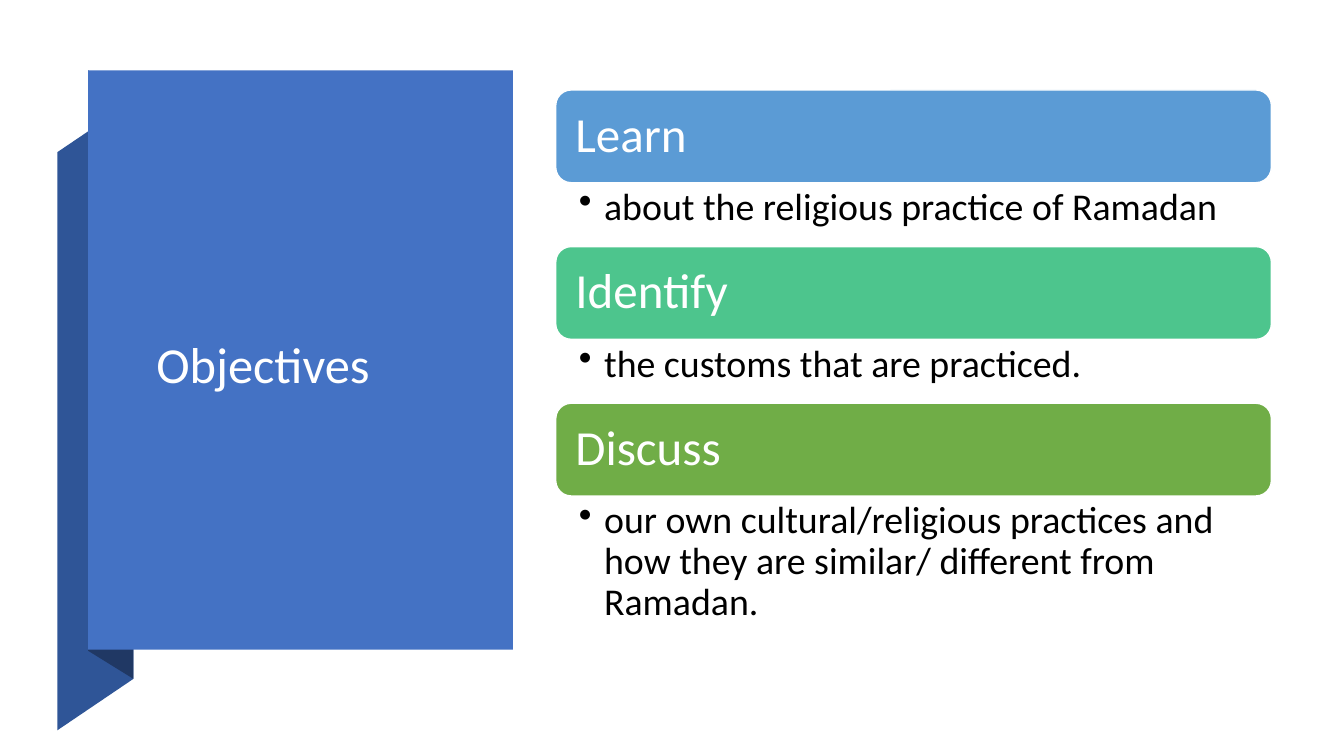
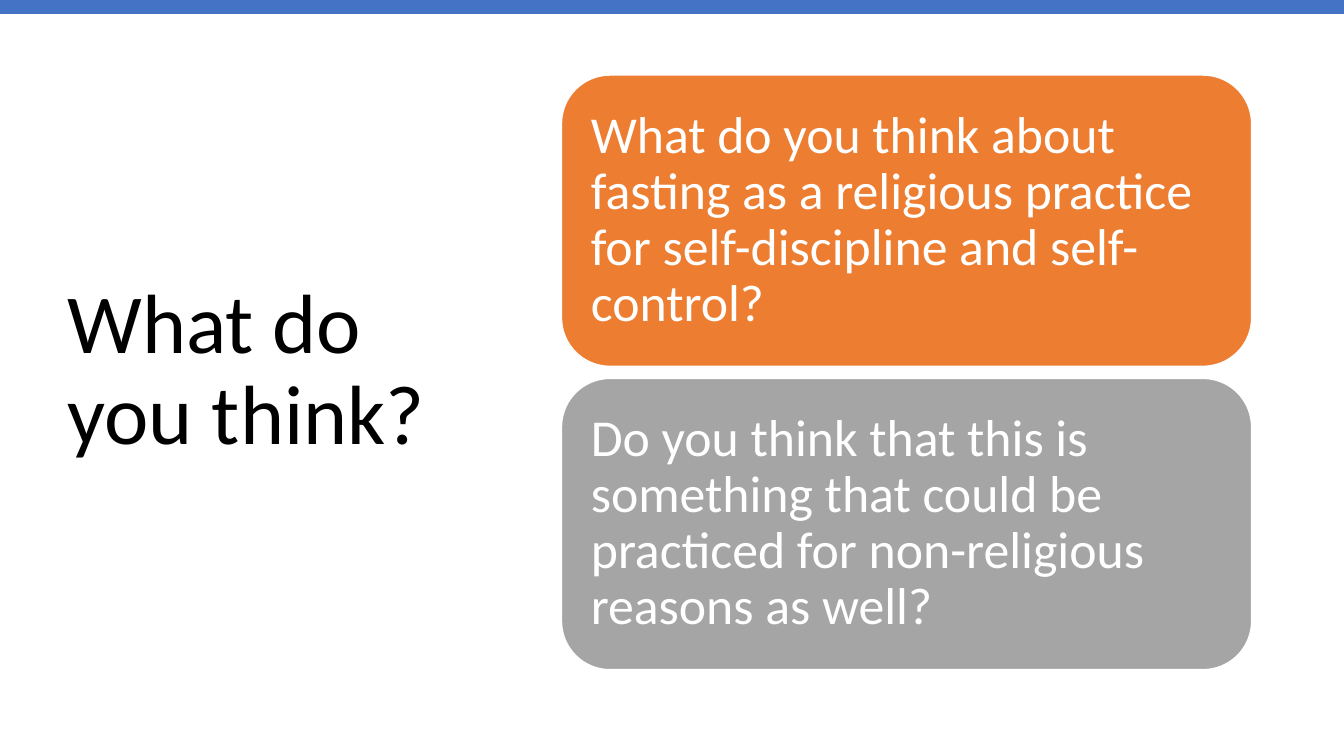
from lxml import etree
from pptx import Presentation
from pptx.dml.color import RGBColor
from pptx.enum.shapes import MSO_SHAPE
from pptx.enum.text import MSO_ANCHOR, MSO_AUTO_SIZE, PP_ALIGN
from pptx.oxml.ns import qn
from pptx.util import Inches, Pt

RECT, ROUND = MSO_SHAPE.RECTANGLE, MSO_SHAPE.ROUNDED_RECTANGLE
TOP, MIDDLE = MSO_ANCHOR.TOP, MSO_ANCHOR.MIDDLE
LEFT, NO_FIT = PP_ALIGN.LEFT, MSO_AUTO_SIZE.NONE
TITLE_ONLY = 5

FONT = "Calibri"
WHITE = RGBColor(0xFF, 0xFF, 0xFF)
BLACK = RGBColor(0x00, 0x00, 0x00)
BLUE = RGBColor(0x44, 0x72, 0xC4)
MID_BLUE = RGBColor(0x2F, 0x55, 0x97)
DARK_BLUE = RGBColor(0x20, 0x38, 0x64)
SKY = RGBColor(0x5B, 0x9B, 0xD5)
MINT = RGBColor(0x4D, 0xC5, 0x8D)
GREEN = RGBColor(0x70, 0xAD, 0x47)
ORANGE = RGBColor(0xED, 0x7D, 0x31)
GRAY = RGBColor(0xA5, 0xA5, 0xA5)

CARD_INSETS = (0.15, 0.15, 0.15, 0.15)
BULLET_INSETS = (0.23, 0.05, 0.27, 0.05)
TITLE_INSETS = (0.1, 0.05, 0.1, 0.05)


class Deck:
    """Hold the shared style and the current slide; places are percentages of the slide."""

    def __init__(self):
        self.prs = Presentation()
        self.prs.slide_width, self.prs.slide_height = Inches(13.33), Inches(7.5)
        self.s = None

    def x(self, share):
        return round(self.prs.slide_width * share / 100)

    def y(self, share):
        return round(self.prs.slide_height * share / 100)

    def box(self, left, top, width, height):
        return self.x(left), self.y(top), self.x(width), self.y(height)

    def add_slide(self):
        self.s = self.prs.slides.add_slide(self.prs.slide_layouts[TITLE_ONLY])

    def set_text(self, sp, text, size, color, anchor, insets):
        tf = sp.text_frame
        tf.text = text
        tf.word_wrap, tf.auto_size, tf.vertical_anchor = True, NO_FIT, anchor
        tf.margin_left, tf.margin_top, tf.margin_right, tf.margin_bottom = map(Inches, insets)
        p = tf.paragraphs[0]
        p.alignment, p.line_spacing = LEFT, 0.9
        font = p.runs[0].font
        font.name, font.size, font.color.rgb = FONT, Pt(size), color
        return p

    def title(self, text, place, size, color):
        sp = self.s.shapes.title
        sp.left, sp.top, sp.width, sp.height = self.box(*place)
        self.set_text(sp, text, size, color, MIDDLE, TITLE_INSETS)
        sp.element.getparent().append(sp.element)

    def paint(self, sp, fill):
        sp.shadow.inherit = False
        sp.fill.solid()
        sp.fill.fore_color.rgb = fill
        sp.line.fill.background()

    def band(self, place, fill):
        self.paint(self.s.shapes.add_shape(RECT, *self.box(*place)), fill)

    def fold(self, points, fill):
        start, *rest = [(self.x(px), self.y(py)) for px, py in points]
        builder = self.s.shapes.build_freeform(*start)
        builder.add_line_segments(rest, close=True)
        self.paint(builder.convert_to_shape(), fill)

    def card(self, text, place, size, fill):
        sp = self.s.shapes.add_shape(ROUND, *self.box(*place))
        self.paint(sp, fill)
        sp.line.color.rgb, sp.line.width = WHITE, Pt(1)
        self.set_text(sp, text, size, WHITE, MIDDLE, CARD_INSETS)

    def bullet(self, text, place, size):
        sp = self.s.shapes.add_textbox(*self.box(*place))
        p = self.set_text(sp, text, size, BLACK, TOP, BULLET_INSETS)
        pPr = p._p.get_or_add_pPr()
        pPr.set("marL", str(Inches(0.25)))
        pPr.set("indent", str(Inches(-0.25)))
        etree.SubElement(pPr, qn("a:buChar")).set("char", "•")


def objectives(deck):
    deck.add_slide()
    deck.fold([(4.27, 96.6), (9.93, 89.8), (9.93, 13.33), (4.27, 20.13)], MID_BLUE)
    deck.fold([(6.57, 86.1), (9.93, 89.8), (9.93, 13.2), (6.57, 9.33)], DARK_BLUE)
    deck.band((6.55, 9.33, 31.62, 76.6), BLUE)
    deck.title("Objectives", (10.88, 22.27, 22.58, 52.53), 36, WHITE)

    left, top, width, head, body = 41.35, 11.9, 53.25, 12.27, 8.45
    rows = [
        ("Learn", "about the religious practice of Ramadan", SKY, body),
        ("Identify", "the customs that are practiced.", MINT, body),
        ("Discuss", "our own cultural/religious practices and how they are similar/ "
         "different from Ramadan.", GREEN, 18),
    ]
    for i, (verb, detail, fill, height) in enumerate(rows):
        row_top = top + i * (head + body)
        deck.card(verb, (left, row_top, width, head), 35, fill)
        deck.bullet(detail, (left, row_top + head, width, height), 27)


def questions(deck):
    deck.add_slide()
    deck.band((0, 0, 100, 1.85), BLUE)
    deck.title("What do you think?", (4.27, 9.07, 31.2, 80.27), 60, BLACK)
    height, gap = 38.53, 1.6
    cards = [
        ("What do you think about fasting as a religious practice for "
         "self-discipline and self-control?", ORANGE),
        ("Do you think that this is something that could be practiced for "
         "non-religious reasons as well?", GRAY),
    ]
    for i, (text, fill) in enumerate(cards):
        deck.card(text, (41.78, 9.93 + i * (height + gap), 51.35, height), 37, fill)


def main():
    deck = Deck()
    objectives(deck)
    questions(deck)
    deck.prs.save("out.pptx")


if __name__ == "__main__":
    main()
